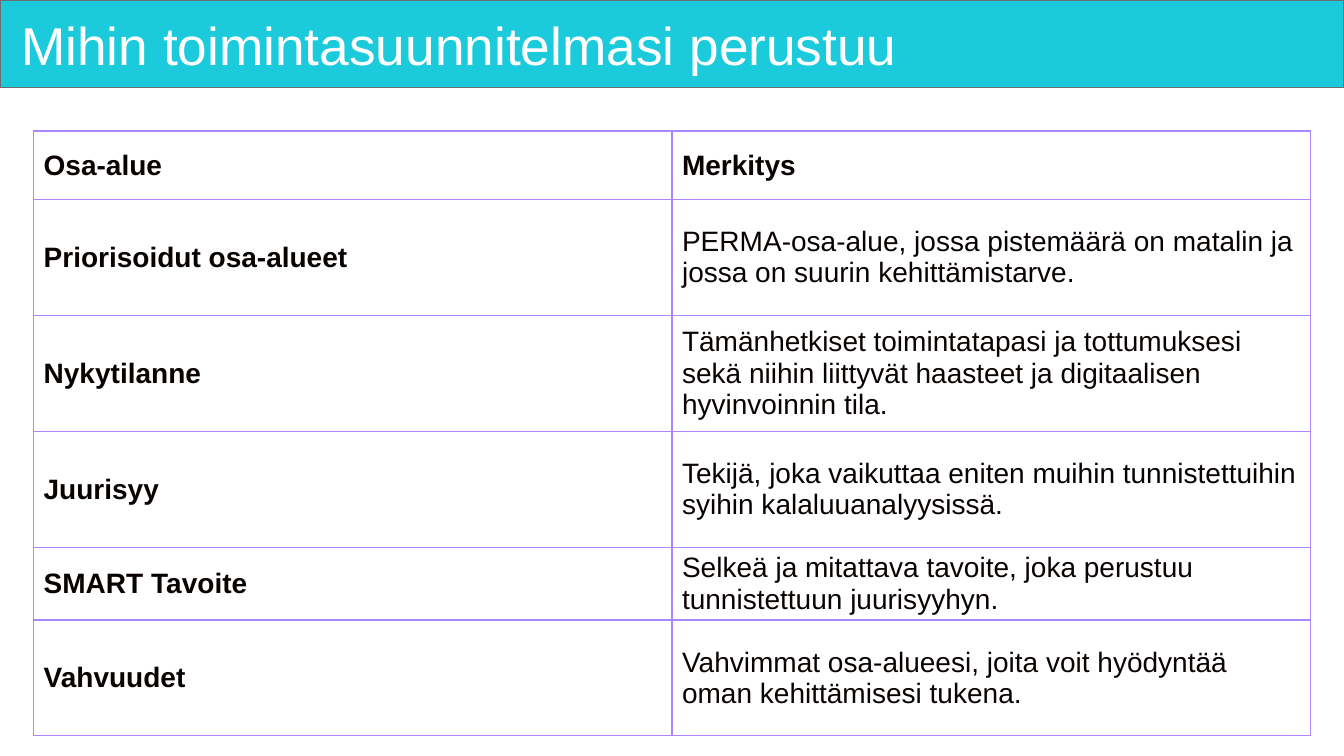
from pptx import Presentation
from pptx.dml.color import RGBColor
from pptx.enum.shapes import MSO_SHAPE
from pptx.enum.text import MSO_ANCHOR, MSO_AUTO_SIZE, PP_ALIGN
from pptx.oxml import parse_xml
from pptx.oxml.ns import nsdecls
from pptx.util import Inches, Pt

GRID_COLUMNS, GRID_ROWS = 40, 75
HEADING = "Mihin toimintasuunnitelmasi perustuu"
AREAS = [
    ("Osa-alue", "Merkitys"),
    ("Priorisoidut osa-alueet",
     "PERMA-osa-alue, jossa pistemäärä on matalin ja jossa on suurin kehittämistarve."),
    ("Nykytilanne",
     "Tämänhetkiset toimintatapasi ja tottumuksesi sekä niihin liittyvät haasteet "
     "ja digitaalisen hyvinvoinnin tila."),
    ("Juurisyy",
     "Tekijä, joka vaikuttaa eniten muihin tunnistettuihin syihin kalaluuanalyysissä."),
    ("SMART Tavoite",
     "Selkeä ja mitattava tavoite, joka perustuu tunnistettuun juurisyyhyn."),
    ("Vahvuudet",
     "Vahvimmat osa-alueesi, joita voit hyödyntää oman kehittämisesi tukena."),
]
LOW, TALL = 6.8, 11.5
AREA_HEIGHTS = [LOW, TALL, TALL, TALL, LOW, TALL]


def color(hex_code):
    return RGBColor.from_string(hex_code)


class SlideBuilder:
    font = "Arial"
    white, ink = "FFFFFF", "080301"
    turquoise, gray, violet = "1BCBDC", "6C6E70", "AA87FF"

    def __init__(self, deck):
        self.column = deck.slide_width / GRID_COLUMNS
        self.row = deck.slide_height / GRID_ROWS
        self.slide = deck.slides.add_slide(deck.slide_layouts[5])

    def place(self, left, top, width, height):
        """Turn grid columns and rows into slide lengths."""
        return (round(left * self.column), round(top * self.row),
                round(width * self.column), round(height * self.row))

    def style(self, paragraph, size, hex_code, bold=False):
        paragraph.alignment = PP_ALIGN.LEFT
        for run in paragraph.runs:
            run.font.name = self.font
            run.font.size = Pt(size)
            run.font.bold = bold
            run.font.color.rgb = color(hex_code)

    def band(self, *area):
        """Draw the title band behind the title."""
        band = self.slide.shapes.add_shape(MSO_SHAPE.RECTANGLE, *self.place(*area))
        band.shadow.inherit = False
        band.fill.solid()
        band.fill.fore_color.rgb = color(self.turquoise)
        band.line.color.rgb = color(self.gray)
        band.line.width = Pt(1)
        self.slide.shapes.title.element.addprevious(band.element)

    def title(self, text, *area):
        title = self.slide.shapes.title
        title.left, title.top, title.width, title.height = self.place(*area)
        frame = title.text_frame
        frame.text = text
        frame.word_wrap = True
        frame.auto_size = MSO_AUTO_SIZE.NONE
        frame.vertical_anchor = MSO_ANCHOR.MIDDLE
        frame.margin_left = Inches(0.1)
        frame.margin_top = frame.margin_right = frame.margin_bottom = Inches(0.06)
        frame.paragraphs[0].line_spacing = 0.9
        self.style(frame.paragraphs[0], 38, self.white)

    def cell_borders(self, cell):
        properties = cell._tc.get_or_add_tcPr()
        for position, side in enumerate("LRTB"):
            properties.insert(position, parse_xml(
                f'<a:ln{side} {nsdecls("a")} w="{Pt(1)}"><a:solidFill>'
                f'<a:srgbClr val="{self.violet}"/></a:solidFill></a:ln{side}>'))

    def table(self, records, heights, left, top, width):
        """Draw a table with a bold first row and first column."""
        table = self.slide.shapes.add_table(
            len(records), len(records[0]),
            *self.place(left, top, width, sum(heights))).table
        for r, (record, height) in enumerate(zip(records, heights)):
            table.rows[r].height = round(height * self.row)
            for c, text in enumerate(record):
                cell = table.cell(r, c)
                cell.text_frame.text = text
                cell.vertical_anchor = MSO_ANCHOR.MIDDLE
                cell.fill.solid()
                cell.fill.fore_color.rgb = color(self.white)
                self.cell_borders(cell)
                self.style(cell.text_frame.paragraphs[0], 20, self.ink,
                           bold=r == 0 or c == 0)


def main():
    deck = Presentation()
    deck.slide_width, deck.slide_height = Inches(13.33), Inches(7.5)
    builder = SlideBuilder(deck)
    builder.band(0, 0, GRID_COLUMNS, 8.7)
    builder.title(HEADING, 0.33, 0.9, 39.2, 7.8)
    builder.table(AREAS, AREA_HEIGHTS, 1, 13, GRID_COLUMNS - 2)
    deck.save("out.pptx")


if __name__ == "__main__":
    main()
